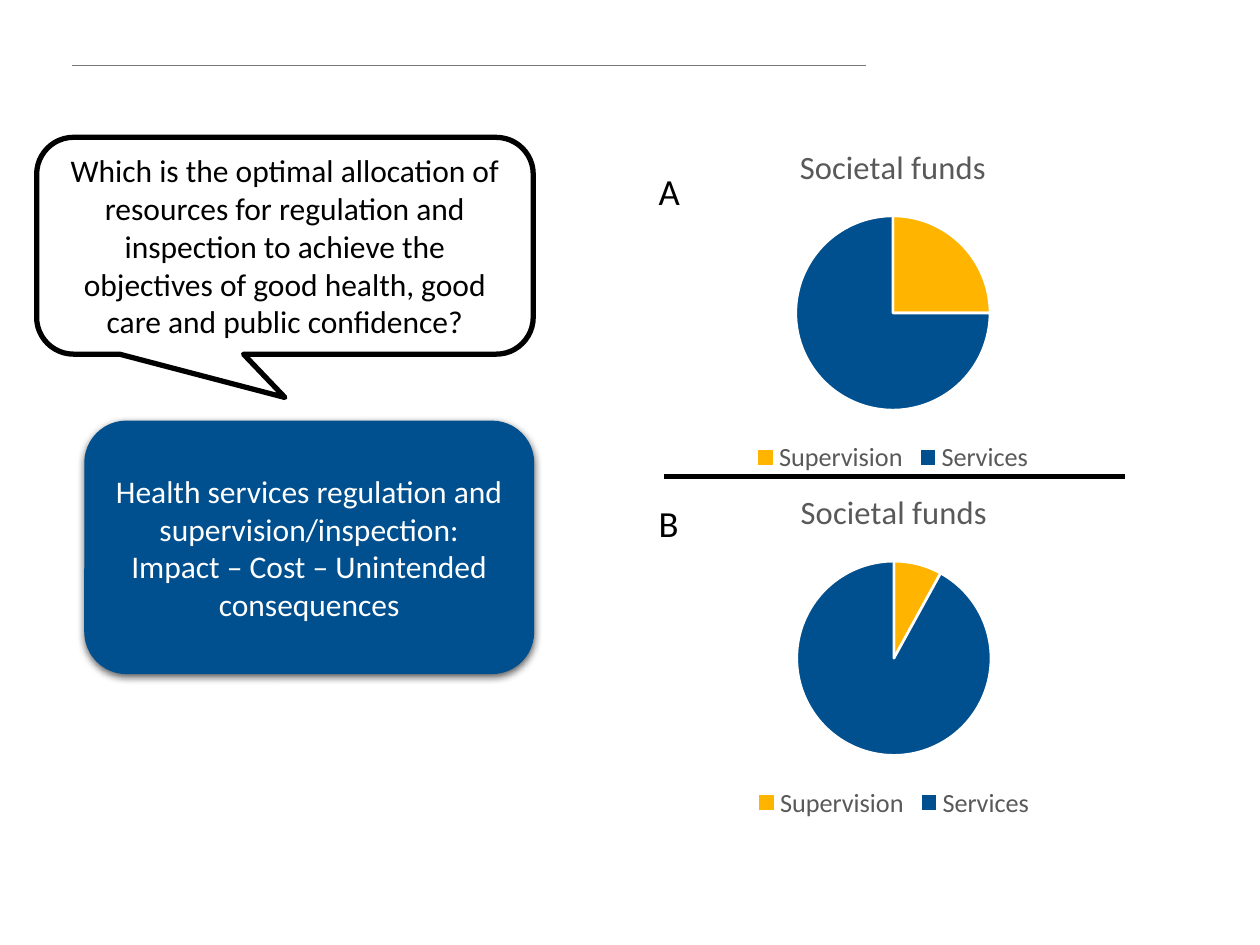
from lxml.etree import SubElement
from pptx import Presentation
from pptx.chart.data import CategoryChartData
from pptx.dml.color import RGBColor
from pptx.enum.chart import XL_CHART_TYPE, XL_LEGEND_POSITION
from pptx.enum.shapes import MSO_CONNECTOR, MSO_SHAPE
from pptx.enum.text import MSO_ANCHOR, PP_ALIGN
from pptx.oxml import parse_xml
from pptx.oxml.ns import nsdecls, qn
from pptx.util import Cm, Pt

FONT = "Calibri"
BLUE = RGBColor(0x00, 0x4F, 0x8E)
YELLOW = RGBColor(0xFF, 0xB5, 0x00)
BLACK = RGBColor(0x00, 0x00, 0x00)
WHITE = RGBColor(0xFF, 0xFF, 0xFF)
RULE_GREY = RGBColor(0x78, 0x78, 0x78)
TEXT_GREY = RGBColor(0x59, 0x59, 0x59)

QUESTION = [
    "Which is the optimal allocation of resources for regulation and inspection "
    "to achieve the objectives of good health, good care and public confidence?"
]
TOPIC = [
    "Health services regulation and supervision/inspection:",
    "Impact – Cost – Unintended consequences",
]
CHART_TITLE = "Societal funds"
SHARES = {"Supervision": YELLOW, "Services": BLUE}
# label, label top, chart left, chart top (cm), values
SCENARIOS = [
    ("A", 3.28, 12.12, 2.51, (25, 75)),
    ("B", 9.96, 12.14, 9.47, (8, 92)),
]
# left, top, right, y-independent style (cm, points)
RULES = [
    (1.45, 1.32, 17.45, RULE_GREY, 0.75),
    (13.39, 9.6, 22.68, BLACK, 3),
]


def style_font(font, size, color):
    font.name = FONT
    font.size = Pt(size)
    font.color.rgb = color


def write(shape, lines, size, color, alignment):
    frame = shape.text_frame
    frame.word_wrap = True
    frame.text = "\n".join(lines)
    for para in frame.paragraphs:
        para.alignment = alignment
        for span in para.runs:
            style_font(span.font, size, color)


def add_panel(page, kind, position, fill, lines, color):
    panel = page.shapes.add_shape(kind, *map(Cm, position))
    panel.shadow.inherit = False
    panel.fill.solid()
    panel.fill.fore_color.rgb = fill
    panel.line.fill.background()
    panel.text_frame.vertical_anchor = MSO_ANCHOR.MIDDLE
    write(panel, lines, 18, color, PP_ALIGN.CENTER)
    return panel


def add_soft_shadow(shape):
    effects = shape._element.spPr.find(qn("a:effectLst"))
    effects.append(parse_xml(
        f'<a:outerShdw {nsdecls("a")} blurRad="{Pt(4.5)}" dist="{Pt(1.5)}" '
        'dir="5400000" algn="ctr" rotWithShape="0">'
        '<a:srgbClr val="000000"><a:alpha val="63000"/></a:srgbClr></a:outerShdw>'
    ))


def add_rule(page, left, top, right, color, width):
    rule = page.shapes.add_connector(
        MSO_CONNECTOR.STRAIGHT, Cm(left), Cm(top), Cm(right), Cm(top))
    rule.line.color.rgb = color
    rule.line.width = Pt(width)
    SubElement(rule._element.spPr, qn("a:effectLst"))


def add_pie(page, left, top, values):
    data = CategoryChartData()
    data.categories = list(SHARES)
    data.add_series(CHART_TITLE, values)
    chart = page.shapes.add_chart(
        XL_CHART_TYPE.PIE, Cm(left), Cm(top), Cm(11.76), Cm(7.14), data).chart
    style_font(chart.font, 10, BLACK)

    chart.has_title = True
    title = chart.chart_title
    title.include_in_layout = False
    title.text_frame.text = CHART_TITLE
    title_font = title.text_frame.paragraphs[0].runs[0].font
    style_font(title_font, 18.6, TEXT_GREY)
    title_font.bold = False

    chart.has_legend = True
    chart.legend.position = XL_LEGEND_POSITION.BOTTOM
    chart.legend.include_in_layout = False
    style_font(chart.legend.font, 15, TEXT_GREY)

    plot = chart.plots[0]
    plot.vary_by_categories = True
    for index, color in enumerate(SHARES.values()):
        slice_format = plot.series[0].points[index].format
        slice_format.fill.solid()
        slice_format.fill.fore_color.rgb = color
        slice_format.line.color.rgb = WHITE
        slice_format.line.width = Pt(1.5)


def main():
    deck = Presentation()
    deck.slide_width, deck.slide_height = Cm(25.4), Cm(19.05)
    page = deck.slides.add_slide(deck.slide_layouts[6])

    topic = add_panel(page, MSO_SHAPE.ROUNDED_RECTANGLE, (1.7, 8.48, 9.07, 5.11),
                      BLUE, TOPIC, WHITE)
    add_soft_shadow(topic)

    for label, label_top, left, top, values in SCENARIOS:
        add_pie(page, left, top, values)
        box = page.shapes.add_textbox(Cm(13.03), Cm(label_top), Cm(1.68), Cm(1.14))
        write(box, [label], 21, BLACK, PP_ALIGN.LEFT)

    for rule in RULES:
        add_rule(page, *rule)

    callout = add_panel(page, MSO_SHAPE.ROUNDED_RECTANGULAR_CALLOUT,
                        (0.74, 2.77, 10.01, 4.37), WHITE, QUESTION, BLACK)
    callout.line.color.rgb = BLACK
    callout.line.width = Pt(3)
    callout.adjustments[0] = 0
    callout.adjustments[1] = 0.7
    callout.adjustments[2] = 0.17

    deck.save("out.pptx")


if __name__ == "__main__":
    main()
